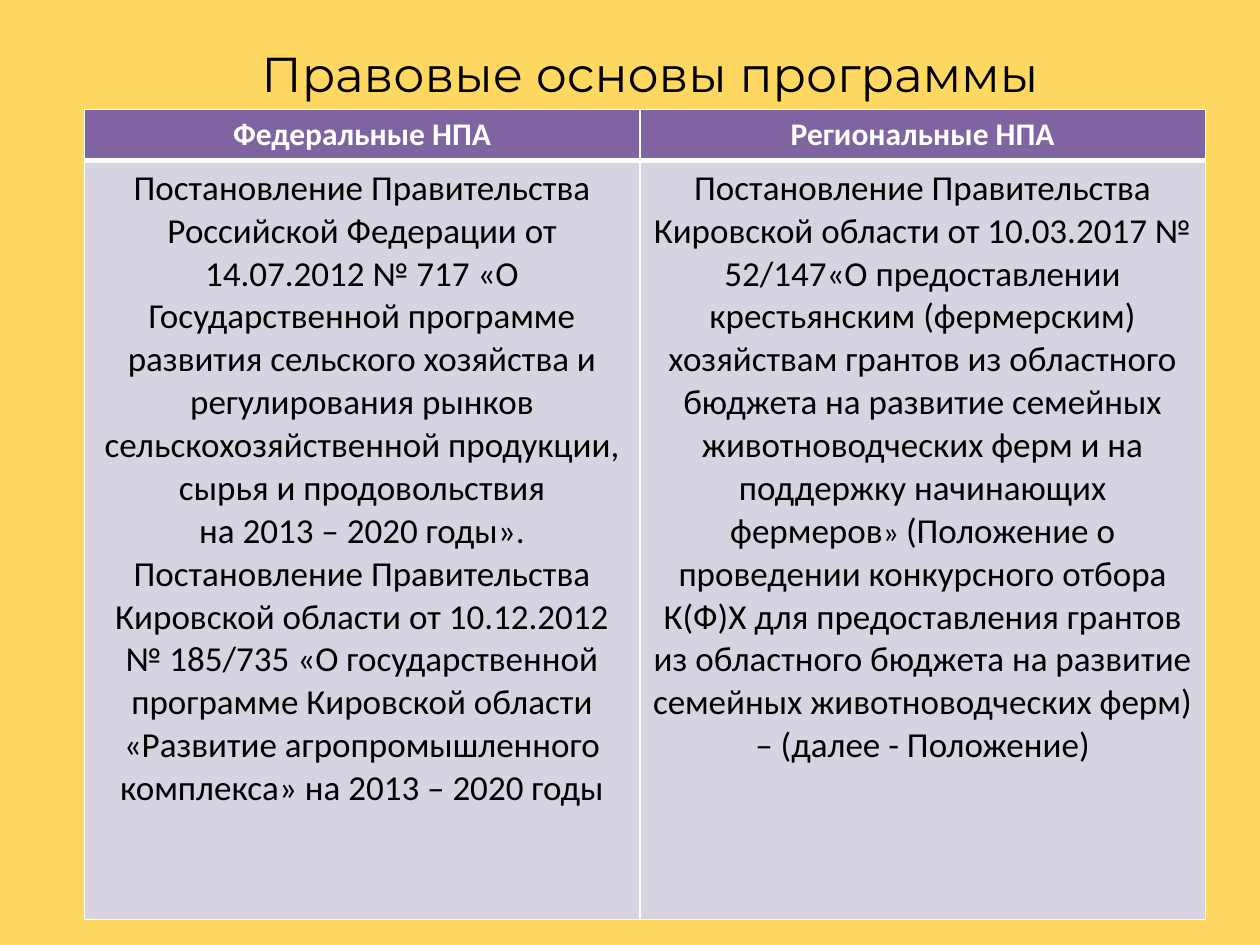
from dataclasses import dataclass

import pptx
import pptx.dml.color
import pptx.enum.text
import pptx.oxml
import pptx.oxml.ns
import pptx.util
from pptx.util import Cm, Pt


@dataclass(frozen=True)
class Theme:
    background: str = "FFD861"
    header_fill: str = "8064A2"
    body_fill: str = "D8D3E0"
    light: str = "FFFFFF"
    dark: str = "000000"
    title_font: str = "Montserrat"
    table_font: str = "Calibri"
    title_size: int = 28
    header_size: int = 18
    body_size: int = 20
    quote_size: int = 18
    thin: int = 1
    thick: int = 3


@dataclass(frozen=True)
class Phrase:
    text: str
    size: int


@dataclass(frozen=True)
class RowStyle:
    height: float  # centimetres
    fill: str
    ink: str
    bold: bool
    top: int
    bottom: int


THEME = Theme()
CENTER = pptx.enum.text.PP_ALIGN.CENTER
COLUMN_WIDTHS = (11.2, 11.4)  # centimetres
HEADER = RowStyle(0.98, THEME.header_fill, THEME.light, True, THEME.thin, THEME.thick)
BODY = RowStyle(15.3, THEME.body_fill, THEME.dark, False, THEME.thick, THEME.thin)

# A cell is a list of paragraphs, a paragraph is a list of phrases
HEADINGS = [
    [[Phrase(heading, THEME.header_size)]]
    for heading in ("Федеральные НПА", "Региональные НПА")
]
FEDERAL_ACTS = [
    [Phrase(act, THEME.body_size)]
    for act in (
        "Постановление Правительства",
        "Российской Федерации от 14.07.2012 № 717 «О Государственной программе "
        "развития сельского хозяйства и регулирования рынков "
        "сельскохозяйственной продукции, сырья и продовольствия\v"
        "на 2013 – 2020 годы».",
        "Постановление Правительства Кировской области от 10.12.2012\v"
        "№ 185/735 «О государственной программе Кировской области «Развитие "
        "агропромышленного комплекса» на 2013 – 2020 годы",
    )
]
REGIONAL_ACTS = [[
    Phrase(
        "Постановление Правительства Кировской области от 10.03.2017 "
        "№ 52/147«О предоставлении крестьянским (фермерским) хозяйствам "
        "грантов из областного бюджета на развитие семейных животноводческих "
        "ферм и на поддержку начинающих фермеров",
        THEME.body_size,
    ),
    Phrase("» ", THEME.quote_size),
    Phrase(
        "(Положение о проведении конкурсного отбора К(Ф)Х для предоставления "
        "грантов из областного бюджета на развитие семейных животноводческих "
        "ферм) – (далее - Положение)",
        THEME.body_size,
    ),
]]
ROWS = [(HEADER, HEADINGS), (BODY, [FEDERAL_ACTS, REGIONAL_ACTS])]


def rgb(code: str) -> pptx.dml.color.RGBColor:
    return pptx.dml.color.RGBColor.from_string(code)


def format_run(run, font: str, size: int, ink: str, bold: bool = False) -> None:
    run.font.name = font
    run.font.size = Pt(size)
    run.font.color.rgb = rgb(ink)
    run.font.bold = bold


def add_borders(cell, style: RowStyle) -> None:
    properties = cell._tc.get_or_add_tcPr()
    widths = {"L": THEME.thin, "R": THEME.thin, "T": style.top, "B": style.bottom}
    for side, width in widths.items():
        properties.append(pptx.oxml.parse_xml(
            f'<a:ln{side} {pptx.oxml.ns.nsdecls("a")} w="{Pt(width)}">'
            f'<a:solidFill><a:srgbClr val="{THEME.light}"/></a:solidFill>'
            f"</a:ln{side}>"
        ))


def fill_cell(cell, paragraphs: list[list[Phrase]], style: RowStyle) -> None:
    add_borders(cell, style)
    cell.fill.solid()
    cell.fill.fore_color.rgb = rgb(style.fill)
    frame = cell.text_frame
    for index, phrases in enumerate(paragraphs):
        paragraph = frame.add_paragraph() if index else frame.paragraphs[0]
        paragraph.alignment = CENTER
        paragraph.text = phrases[0].text
        for run in paragraph.runs:
            format_run(run, THEME.table_font, phrases[0].size, style.ink, style.bold)
        for phrase in phrases[1:]:
            run = paragraph.add_run()
            run.text = phrase.text
            format_run(run, THEME.table_font, phrase.size, style.ink, style.bold)


def add_title(slide, text: str) -> None:
    title = slide.shapes.title
    title.left, title.top, title.width, title.height = Cm(4.4), Cm(0.74), Cm(17.4), Cm(1.45)
    frame = title.text_frame
    frame.text = text
    frame.word_wrap = True
    frame.auto_size = pptx.enum.text.MSO_AUTO_SIZE.NONE
    frame.vertical_anchor = pptx.enum.text.MSO_ANCHOR.TOP
    frame.paragraphs[0].alignment = CENTER
    format_run(frame.paragraphs[0].runs[0], THEME.title_font, THEME.title_size, THEME.dark)


def add_acts_table(slide) -> None:
    acts = slide.shapes.add_table(
        len(ROWS), len(COLUMN_WIDTHS), Cm(1.7), Cm(2.21),
        Cm(sum(COLUMN_WIDTHS)), Cm(sum(style.height for style, _ in ROWS)),
    ).table
    for column, width in zip(acts.columns, COLUMN_WIDTHS):
        column.width = Cm(width)
    for row, (style, contents) in zip(acts.rows, ROWS):
        row.height = Cm(style.height)
        for cell, paragraphs in zip(row.cells, contents):
            fill_cell(cell, paragraphs, style)


def main() -> None:
    presentation = pptx.Presentation()
    presentation.slide_width, presentation.slide_height = Cm(25.4), Cm(19.05)
    title_only = presentation.slide_layouts[5]
    slide = presentation.slides.add_slide(title_only)

    # Background
    slide.background.fill.solid()
    slide.background.fill.fore_color.rgb = rgb(THEME.background)

    # Title and table of legal acts
    add_title(slide, "Правовые основы программы")
    add_acts_table(slide)
    presentation.save("out.pptx")


if __name__ == "__main__":
    main()
